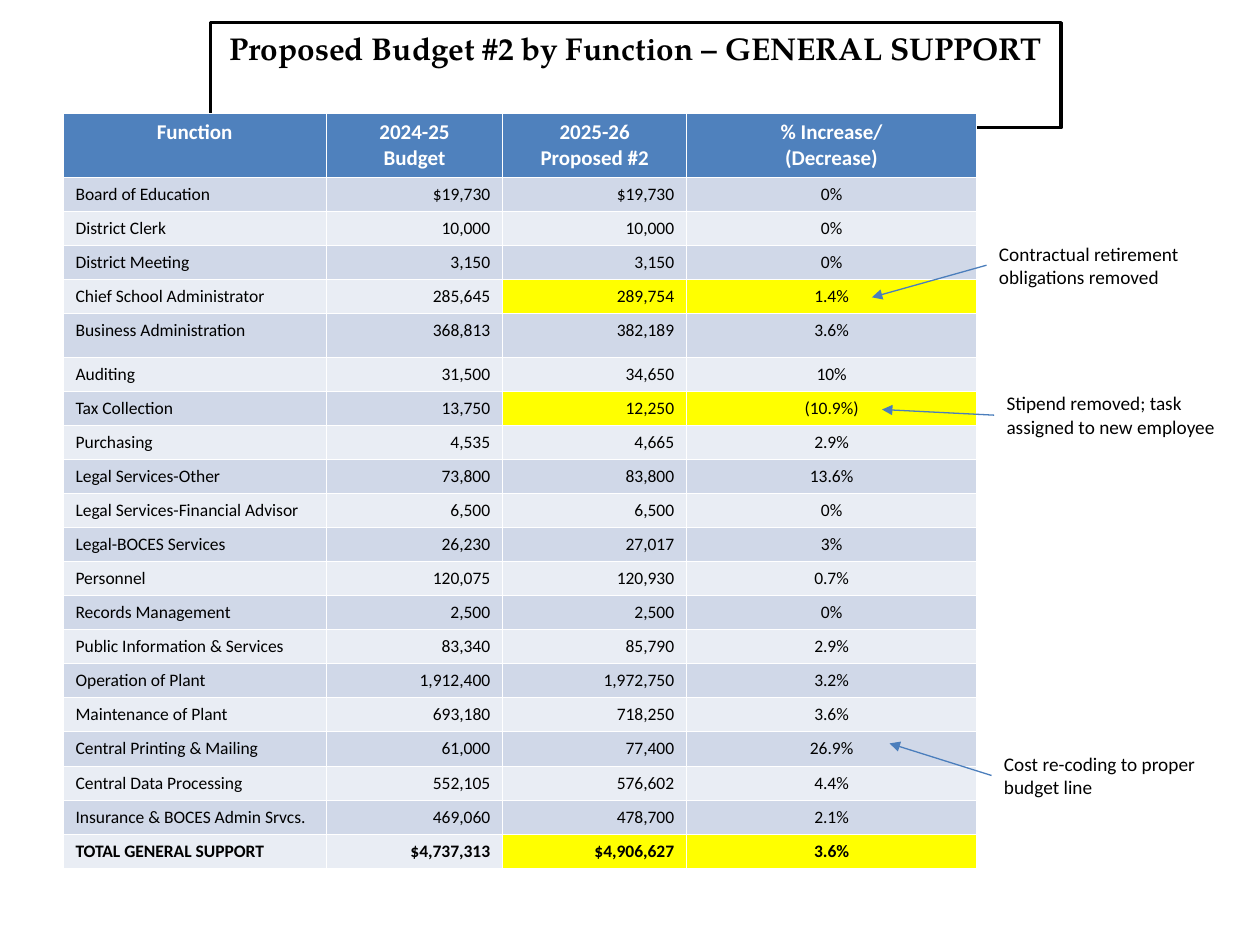
from lxml import etree
from pptx import Presentation
from pptx import util as u
from pptx.dml.color import RGBColor
from pptx.enum import shapes, text
from pptx.oxml.ns import qn

Inches, Pt = u.Inches, u.Pt
LEFT, CENTER, RIGHT = text.PP_ALIGN.LEFT, text.PP_ALIGN.CENTER, text.PP_ALIGN.RIGHT

COLORS = {
    "black": "000000",
    "white": "FFFFFF",
    "header": "4F81BD",
    "band_dark": "D0D8E8",
    "band_light": "E9EDF4",
    "highlight": "FFFF00",
    "arrow": "4B7EBC",
}

HEADERS = ["Function", "2024-25\nBudget", "2025-26\nProposed #2", "% Increase/\n(Decrease)"]
BUDGET = [
    ("Board of Education", "$19,730", "$19,730", "0%"),
    ("District Clerk", "10,000", "10,000", "0%"),
    ("District Meeting", "3,150", "3,150", "0%"),
    ("Chief School Administrator", "285,645", "289,754", "1.4%"),
    ("Business Administration", "368,813", "382,189", "3.6%"),
    ("Auditing", "31,500", "34,650", "10%"),
    ("Tax Collection", "13,750", "12,250", "(10.9%)"),
    ("Purchasing", "4,535", "4,665", "2.9%"),
    ("Legal Services-Other", "73,800", "83,800", "13.6%"),
    ("Legal Services-Financial Advisor", "6,500", "6,500", "0%"),
    ("Legal-BOCES Services", "26,230", "27,017", "3%"),
    ("Personnel", "120,075", "120,930", "0.7%"),
    ("Records Management", "2,500", "2,500", "0%"),
    ("Public Information & Services", "83,340", "85,790", "2.9%"),
    ("Operation of Plant", "1,912,400", "1,972,750", "3.2%"),
    ("Maintenance of Plant", "693,180", "718,250", "3.6%"),
    ("Central Printing & Mailing", "61,000", "77,400", "26.9%"),
    ("Central Data Processing", "552,105", "576,602", "4.4%"),
    ("Insurance & BOCES Admin Srvcs.", "469,060", "478,700", "2.1%"),
    ("TOTAL GENERAL SUPPORT", "$4,737,313", "$4,906,627", "3.6%"),
]
TOTAL = "TOTAL GENERAL SUPPORT"
HIGHLIGHTED = {"Chief School Administrator", "Tax Collection", TOTAL}
COLUMN_WIDTHS = [2.09, 1.4, 1.46, 2.3]
COLUMN_ALIGNS = [LEFT, RIGHT, RIGHT, CENTER]
HEADER_HEIGHT, ROW_HEIGHT = 0.51, 0.27
TALL_ROWS = {"Business Administration": 0.35, "Central Printing & Mailing": 0.28}

NOTES = [
    ("Contractual retirement obligations removed", (7.83, 1.87, 1.67, 0.47), (6.92, 2.36)),
    ("Stipend removed; task assigned to new employee", (7.89, 3.06, 2, 0.47), (7, 3.25)),
    ("Cost re-coding to proper budget line", (7.87, 5.92, 1.84, 0.47), (7.06, 5.9)),
]


def rgb(name):
    return RGBColor.from_string(COLORS[name])


def write(tf, content, size=11, font="Calibri", color="black", bold=False, align=LEFT):
    for i, line in enumerate(content.split("\n")):
        p = tf.paragraphs[0] if i == 0 else tf.add_paragraph()
        p.alignment = align
        r = p.add_run()
        r.text = line
        r.font.size = Pt(size)
        r.font.name = font
        r.font.bold = bold
        r.font.color.rgb = rgb(color)


def add_title(s, box):
    sp = s.shapes.title
    sp.left, sp.top, sp.width, sp.height = map(Inches, box)
    sp.fill.solid()
    sp.fill.fore_color.rgb = rgb("white")
    sp.line.color.rgb = rgb("black")
    sp.line.width = Pt(2)
    tf = sp.text_frame
    tf.word_wrap = True
    tf.auto_size = text.MSO_AUTO_SIZE.SHAPE_TO_FIT_TEXT
    tf.vertical_anchor = text.MSO_ANCHOR.TOP
    write(tf, "Proposed Budget #2 by Function – GENERAL SUPPORT",
          size=18, font="TeX Gyre Pagella", bold=True, align=CENTER)


def fill_cell(cell, content, fill, **fmt):
    cell.fill.solid()
    cell.fill.fore_color.rgb = rgb(fill)
    write(cell.text_frame, content, **fmt)


def add_budget_table(s, box):
    frame = s.shapes.add_table(len(BUDGET) + 1, len(HEADERS), *map(Inches, box))
    table = frame.table
    for column, width in zip(table.columns, COLUMN_WIDTHS):
        column.width = Inches(width)
    table.rows[0].height = Inches(HEADER_HEIGHT)
    for c, header in enumerate(HEADERS):
        fill_cell(table.cell(0, c), header, "header",
                  size=12, color="white", bold=True, align=CENTER)
    for i, row in enumerate(BUDGET, start=1):
        name = row[0]
        table.rows[i].height = Inches(TALL_ROWS.get(name, ROW_HEIGHT))
        band = "band_dark" if i % 2 else "band_light"
        for c, value in enumerate(row):
            fill = "highlight" if name in HIGHLIGHTED and c >= 2 else band
            fill_cell(table.cell(i, c), value, fill,
                      size=10, bold=name == TOTAL, align=COLUMN_ALIGNS[c])


def add_note(s, content, box, target):
    left, top, width, height = box
    tf = s.shapes.add_textbox(*map(Inches, box)).text_frame
    tf.word_wrap = True
    tf.auto_size = text.MSO_AUTO_SIZE.SHAPE_TO_FIT_TEXT
    write(tf, content)
    start = (left, top + height / 2)
    arrow = s.shapes.add_connector(shapes.MSO_CONNECTOR.STRAIGHT, *map(Inches, start + target))
    arrow.line.color.rgb = rgb("arrow")
    arrow.line.width = Pt(0.75)
    etree.SubElement(arrow.line._get_or_add_ln(), qn("a:tailEnd"), type="triangle")
    etree.SubElement(arrow._element.spPr, qn("a:effectLst"))


def main():
    prs = Presentation()
    prs.slide_width, prs.slide_height = Inches(10), Inches(7.5)
    s = prs.slides.add_slide(prs.slide_layouts[5])
    add_title(s, (1.67, 0.18, 6.75, 0.4))
    add_budget_table(s, (0.5, 0.9, 7.25, 5.95))
    for note in NOTES:
        add_note(s, *note)
    prs.save("out.pptx")


if __name__ == "__main__":
    main()
